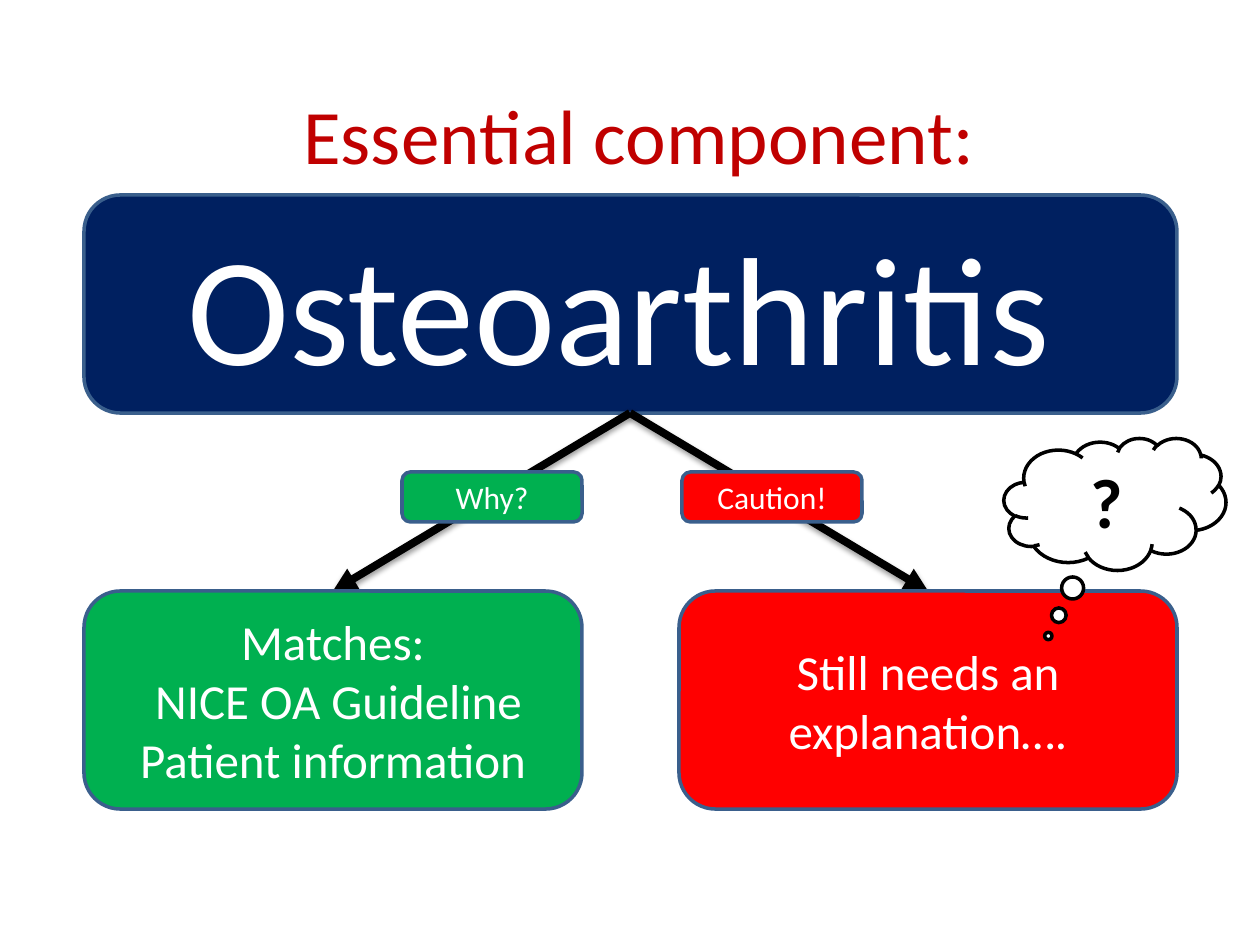
from lxml.etree import SubElement
from pptx import Presentation
from pptx.dml.color import RGBColor
from pptx.enum.shapes import MSO_CONNECTOR, MSO_SHAPE
from pptx.enum.text import MSO_ANCHOR, PP_ALIGN
from pptx.oxml import parse_xml
from pptx.oxml.ns import nsdecls, qn
from pptx.util import Emu, Pt

SHADOW = f"""<a:effectLst {nsdecls('a')}>
  <a:outerShdw blurRad="40000" dist="20000" dir="5400000" rotWithShape="0">
    <a:srgbClr val="000000"><a:alpha val="38000"/></a:srgbClr>
  </a:outerShdw>
</a:effectLst>"""


def px(*nums):
    return [Emu(round(n * 914400 / 126)) for n in nums]


def color(text):
    return RGBColor.from_string(text)


class Deck:
    font = "Calibri"
    edge = "3A5F8C"

    def __init__(self):
        self.prs = Presentation()
        self.prs.slide_width, self.prs.slide_height = px(1260, 945)
        self.slide = self.prs.slides.add_slide(self.prs.slide_layouts[5])

    def text(self, frame, lines, tone, bold=False):
        frame.word_wrap = True
        frame.vertical_anchor = MSO_ANCHOR.MIDDLE
        for i, line in enumerate(lines):
            para = frame.add_paragraph() if i else frame.paragraphs[0]
            para.alignment = PP_ALIGN.CENTER
            for words, size in line:
                run = para.add_run()
                run.text = words
                run.font.name = self.font
                run.font.size = Pt(size)
                run.font.bold = bold
                run.font.color.rgb = color(tone)

    def title(self, rect, words, size, tone):
        box = self.slide.shapes.title
        box.left, box.top, box.width, box.height = px(*rect)
        self.text(box.text_frame, [[(words, size)]], tone)

    def shape(self, kind, rect, fill, edge):
        item = self.slide.shapes.add_shape(kind, *px(*rect))
        item.shadow.inherit = False
        item.fill.solid()
        item.fill.fore_color.rgb = color(fill)
        item.line.color.rgb = color(edge)
        item.line.width = Pt(2)
        return item

    def box(self, rect, fill, lines):
        item = self.shape(MSO_SHAPE.ROUNDED_RECTANGLE, rect, fill, self.edge)
        self.text(item.text_frame, lines, "FFFFFF")

    def cloud(self, rect, words, size):
        item = self.shape(MSO_SHAPE.CLOUD_CALLOUT, rect, "FFFFFF", "000000")
        item.adjustments[0] = -0.3
        item.adjustments[1] = 1
        self.text(item.text_frame, [[(words, size)]], "000000", True)

    def arrow(self, start, end):
        item = self.slide.shapes.add_connector(
            MSO_CONNECTOR.STRAIGHT, *px(*start, *end))
        item.line.color.rgb = color("000000")
        item.line.width = Pt(4.5)
        props = item._element.spPr
        SubElement(props.find(qn("a:ln")), qn("a:tailEnd"), type="triangle")
        props.append(parse_xml(SHADOW))


def main():
    green, red = "00B050", "FF0000"
    left, top, wide, high = 84, 195, 1093, 218
    low, half = 591, 498
    right = left + wide - half
    start = (left + wide // 2, top + high)

    deck = Deck()
    deck.title((72, 55, 1134, 158), "Essential component:", 44, "C00000")
    deck.box((left, top, wide, high), "002060",
             [[("Osteoarthritis", 88), (" ", 60)]])

    sides = [
        (left, 402, green, "Why?",
         ["Matches:", " NICE OA Guideline Patient information"]),
        (right, 682, red, "Caution!", ["Still needs an explanation…."]),
    ]
    for x, tag, fill, label, lines in sides:
        deck.arrow(start, (x + half // 2, low))
        deck.box((tag, 472, 180, 50), fill, [[(label, 18)]])
        deck.box((x, low, half, high), fill, [[(line, 28)] for line in lines])

    deck.cloud((1004, 438, 222, 132), "?", 40)
    deck.prs.save("out.pptx")


if __name__ == "__main__":
    main()
